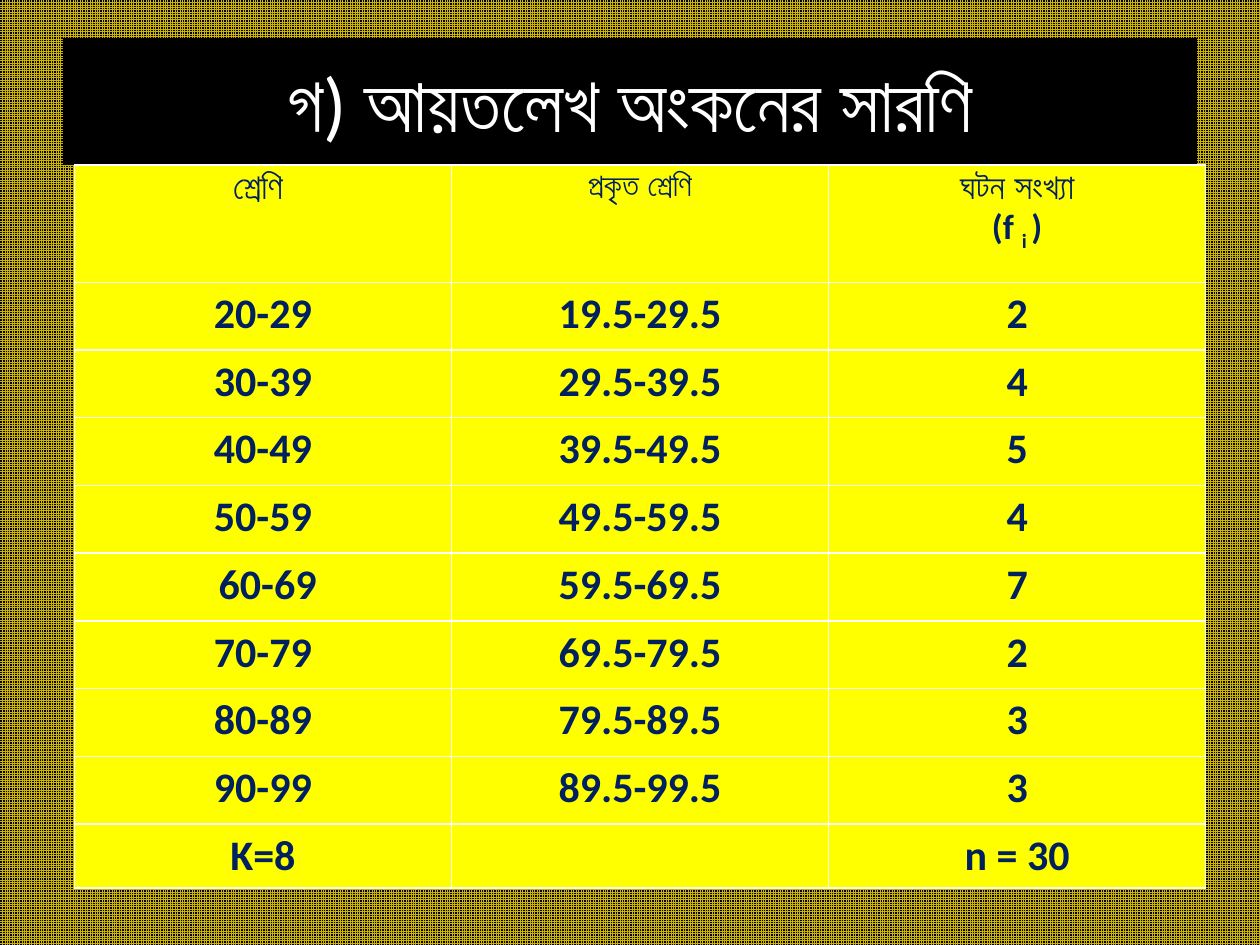
from pptx import Presentation
from pptx.dml.color import RGBColor
from pptx.enum.dml import MSO_PATTERN
from pptx.enum.text import MSO_ANCHOR, PP_ALIGN
from pptx.util import Pt

TITLE = "গ) আয়তলেখ অংকনের সারণি"
HEADER = [
    (20, [["শ্রেণি "]]),
    (18, [["প্রকৃত শ্রেণি"]]),
    (20, [["ঘটন সংখ্যা"], ["(f ", "i ", ")"]]),
]
SUBSCRIPT = "i "
ROWS = [
    ("20-29", "19.5-29.5", "2"),
    ("30-39", "29.5-39.5", "4"),
    ("40-49", "39.5-49.5", "5"),
    ("50-59", "49.5-59.5", "4"),
    (" 60-69", "59.5-69.5", "7"),
    ("70-79", "69.5-79.5", "2"),
    ("80-89", "79.5-89.5", "3"),
    ("90-99", "89.5-99.5", "3"),
    ("K=8", "", "n = 30"),
]
HEADER_H, ROW_H, LAST_H = 67, 38.7, 36.5
COL_W = 215.5


def rgb(code):
    return RGBColor.from_string(code)


def paint(fill, code):
    fill.solid()
    fill.fore_color.rgb = rgb(code)


def add_run(p, text, size, color, bold):
    r = p.add_run()
    r.text = text
    r.font.name = "Calibri"
    r.font.size = Pt(size)
    r.font.bold = bold
    r.font.color.rgb = rgb(color)
    return r


def fill_cell(cell, size, paragraphs):
    paint(cell.fill, "FFFF00")
    tf = cell.text_frame
    for i, runs in enumerate(paragraphs):
        p = tf.add_paragraph() if i else tf.paragraphs[0]
        p.alignment = PP_ALIGN.CENTER
        for text in filter(None, runs):
            r = add_run(p, text, size, "002060", True)
            if text == SUBSCRIPT:
                r.font._element.set("baseline", "-25000")


def add_title(s):
    title = s.shapes.title
    title.left, title.top, title.width, title.height = Pt(36), Pt(21.6), Pt(648), Pt(72.7)
    paint(title.fill, "000000")
    tf = title.text_frame
    tf.vertical_anchor = MSO_ANCHOR.MIDDLE
    p = tf.paragraphs[0]
    p.alignment = PP_ALIGN.CENTER
    add_run(p, TITLE, 44, "FFFFFF", False)


def add_frequency_table(s):
    heights = [HEADER_H] + [ROW_H] * (len(ROWS) - 1) + [LAST_H]
    table = s.shapes.add_table(
        len(heights), len(HEADER), Pt(42.5), Pt(94.3),
        Pt(COL_W * len(HEADER)), Pt(sum(heights)),
    ).table
    for column in table.columns:
        column.width = Pt(COL_W)
    for row, height in zip(table.rows, heights):
        row.height = Pt(height)
    body = [[(24, [[text]]) for text in row] for row in ROWS]
    for row, contents in zip(table.rows, [HEADER] + body):
        for cell, (size, paragraphs) in zip(row.cells, contents):
            fill_cell(cell, size, paragraphs)


def main():
    """Build the frequency table slide for drawing a histogram."""
    prs = Presentation()
    prs.slide_width, prs.slide_height = Pt(720), Pt(540)
    s = prs.slides.add_slide(prs.slide_layouts[5])
    fill = s.background.fill
    fill.patterned()
    fill.pattern = MSO_PATTERN.SMALL_GRID
    fill.fore_color.rgb = rgb("CCB400")
    fill.back_color.rgb = rgb("000000")
    add_title(s)
    add_frequency_table(s)
    prs.save("out.pptx")


if __name__ == "__main__":
    main()
